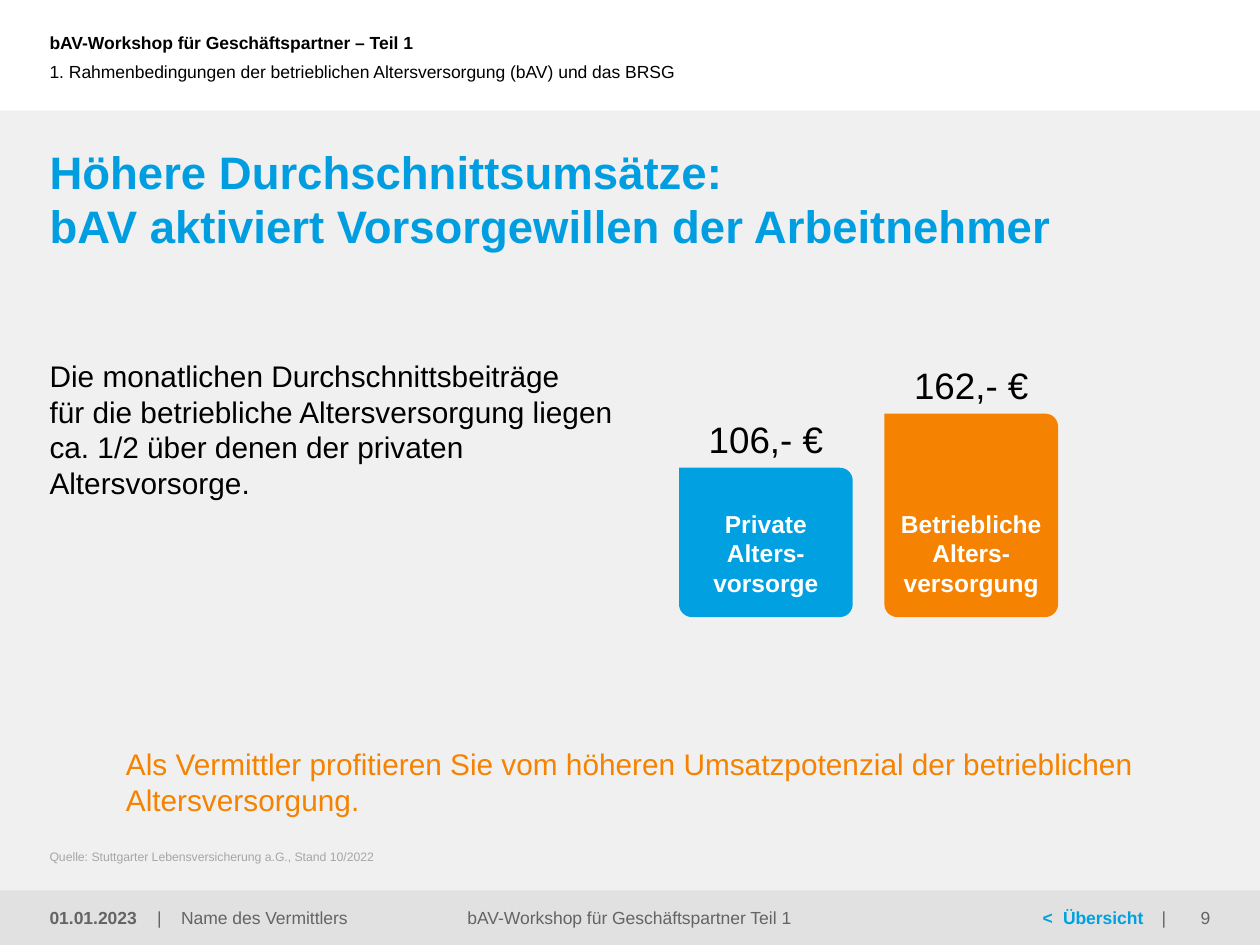
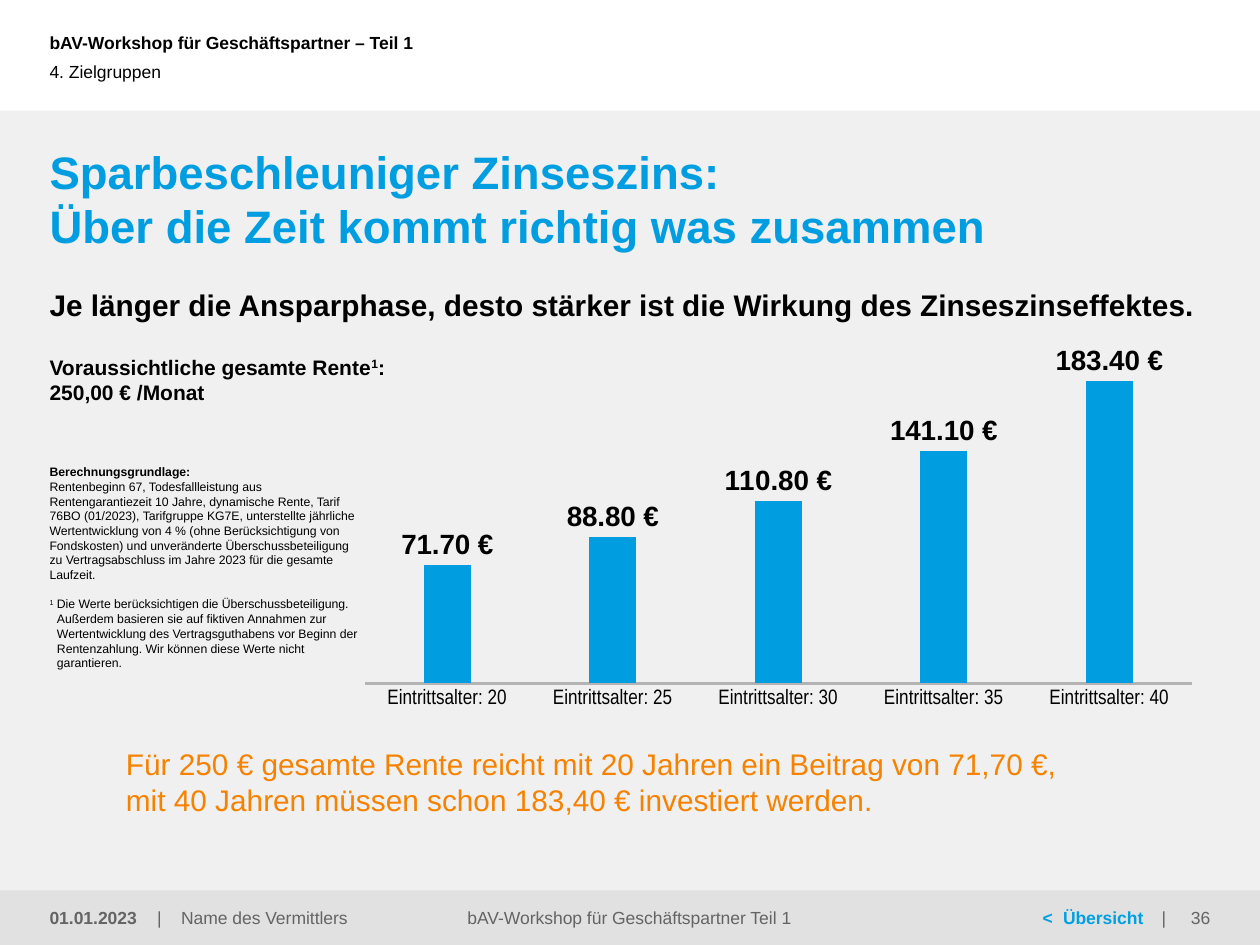
"""Builds two workshop slides on occupational pensions: average premiums and compound interest."""
import math

from lxml import etree
from pptx import Presentation
from pptx import util as u
from pptx.chart.data import CategoryChartData
from pptx.dml.color import RGBColor
from pptx.enum import chart as ch, shapes, text
from pptx.oxml.ns import qn

BLUE, SKY, ORANGE = "009EE0", "00A0E1", "F58200"
BLACK, WHITE, GREY, PALE = "000000", "FFFFFF", "646464", "A6A6A6"
CANVAS, FOOTER, AXIS = "F0F0F0", "E1E1E1", "B3B3B3"
WIDTH, HEIGHT, MARGIN = 25.4, 19.05, 1
CANVAS_TOP, FOOTER_TOP = 2.23, 17.95
FOOTER_HEIGHT = HEIGHT - FOOTER_TOP

TOP, MIDDLE, BOTTOM = text.MSO_ANCHOR.TOP, text.MSO_ANCHOR.MIDDLE, text.MSO_ANCHOR.BOTTOM
LEFT, CENTER, RIGHT = text.PP_ALIGN.LEFT, text.PP_ALIGN.CENTER, text.PP_ALIGN.RIGHT

STYLES = {
    "title": dict(size=26, bold=True, color=BLUE),
    "header": dict(size=10, bold=True, color=BLACK),
    "section": dict(size=10, color=BLACK),
    "body": dict(size=17, color=BLACK),
    "subhead": dict(size=17, bold=True, color=BLACK),
    "takeaway": dict(size=17, color=ORANGE),
    "source": dict(size=7, color=PALE),
    "footer": dict(size=10, color=GREY),
    "pension": dict(size=12, bold=True, color=BLACK),
    "basis": dict(size=7, color=BLACK),
    "premium": dict(size=21, color=BLACK),
    "bar": dict(size=14, bold=True, color=WHITE),
}

PREMIUMS = [
    ("106,- €", ["Private", "Alters-", "vorsorge"], 3.01, SKY),
    ("162,- €", ["Betriebliche", "Alters-", "versorgung"], 4.1, ORANGE),
]
BAR = dict(left=13.69, bottom=12.44, width=3.5, step=4.14, radius=0.26)

SAVINGS = {20: 71.7, 25: 88.8, 30: 110.8, 35: 141.1, 40: 183.4}
CHART_BOX = (7.11, 6.88, 16.99, 7.7)
PLOT = dict(x=0.014, y=0.032, w=0.982, h=0.864)

SUPER = dict(baseline="30000")
PREMIUM_SLIDE = dict(
    number="9",
    section="1. Rahmenbedingungen der betrieblichen Altersversorgung (bAV) und das BRSG",
    title=["Höhere Durchschnittsumsätze:", "bAV aktiviert Vorsorgewillen der Arbeitnehmer"],
    takeaway=["Als Vermittler profitieren Sie vom höheren Umsatzpotenzial "
              "der betrieblichen Altersversorgung."],
)
PREMIUM_BODY = [
    "Die monatlichen Durchschnittsbeiträge",
    "für die betriebliche Altersversorgung liegen ca. 1/2 über denen der privaten Altersvorsorge.",
]
PREMIUM_SOURCE = ["Quelle: Stuttgarter Lebensversicherung a.G., Stand 10/2022"]

SAVINGS_SLIDE = dict(
    number="36",
    section="4. Zielgruppen",
    title=["Sparbeschleuniger Zinseszins:", "Über die Zeit kommt richtig was zusammen"],
    takeaway=["Für 250 € gesamte Rente reicht mit 20 Jahren ein Beitrag von 71,70 €,",
              "mit 40 Jahren müssen schon 183,40 € investiert werden."],
)
SAVINGS_SUBHEAD = ["Je länger die Ansparphase, desto stärker ist die Wirkung des Zinseszinseffektes."]
PENSION = [
    [("Voraussichtliche gesamte Rente", {}), ("1", SUPER), (":", {})],
    "250,00 € /Monat",
]
BASIS = [
    [("Berechnungsgrundlage:", dict(bold=True))],
    "Rentenbeginn 67, Todesfallleistung aus Rentengarantiezeit 10 Jahre, dynamische Rente, "
    "Tarif 76BO (01/2023), Tarifgruppe KG7E, unterstellte jährliche Wertentwicklung von 4 % "
    "(ohne Berücksichtigung von Fondskosten) und unveränderte Überschussbeteiligung zu "
    "Vertragsabschluss im Jahre 2023 für die gesamte Laufzeit.",
    [("1", SUPER),
     (" Die Werte berücksichtigen die Überschussbeteiligung. Außerdem basieren sie auf fiktiven "
      "Annahmen zur Wertentwicklung des Vertragsguthabens vor Beginn der Rentenzahlung. "
      "Wir können diese Werte nicht garantieren.", {})],
]

FOOTER_PARTS = [
    (MARGIN, 2.1, LEFT, [("01.01.2023", dict(bold=True))], ()),
    (3.17, 4, LEFT, [("|\tName des Vermittlers", {})], (0.48,)),
    (7.67, 10.03, CENTER, [("bAV-Workshop für Geschäftspartner Teil 1", {})], ()),
    (21.02, 2.7, LEFT, [("<\tÜbersicht", dict(bold=True, color=SKY)), ("\t|", {})], (0.41, 2.4)),
]


def rgb(color):
    return RGBColor.from_string(color)


def box_cm(*lengths):
    return [u.Cm(length) for length in lengths]


def format_font(font, size, color, bold=False, name="Arial"):
    font.color.rgb = rgb(color)
    for key, value in dict(size=u.Pt(size), bold=bold, name=name).items():
        setattr(font, key, value)


def paint(shape, color):
    shape.shadow.inherit = False
    shape.fill.solid()
    shape.fill.fore_color.rgb = rgb(color)
    shape.line.fill.background()


def write(shape, paragraphs, style, anchor=TOP, align=LEFT, inset_bottom=0, wrap=True):
    frame = shape.text_frame
    layout = dict(word_wrap=wrap, vertical_anchor=anchor, margin_left=0, margin_right=0,
                  margin_top=0, margin_bottom=u.Cm(inset_bottom))
    for key, value in layout.items():
        setattr(frame, key, value)
    for index, content in enumerate(paragraphs):
        paragraph = frame.add_paragraph() if index else frame.paragraphs[0]
        paragraph.alignment = align
        for words, changes in [(content, {})] if isinstance(content, str) else content:
            run = paragraph.add_run()
            run.text = words
            look = {**STYLES[style], **changes}
            baseline = look.pop("baseline", None)
            format_font(run.font, **look)
            if baseline:
                run.font._element.set("baseline", baseline)
    return frame


def add_text(slide, box, paragraphs, style, **layout):
    return write(slide.shapes.add_textbox(*box_cm(*box)), paragraphs, style, **layout)


def set_tabs(paragraph, stops):
    tabs = etree.SubElement(paragraph._p.get_or_add_pPr(), qn("a:tabLst"))
    for stop in stops:
        etree.SubElement(tabs, qn("a:tab"), pos=str(u.Cm(stop)), algn="l")


def add_frame(deck, number, section, title, takeaway):
    slide = deck.slides.add_slide(deck.slide_layouts[6])
    for top, color in [(CANVAS_TOP, CANVAS), (FOOTER_TOP, FOOTER)]:
        band = slide.shapes.add_shape(shapes.MSO_SHAPE.RECTANGLE,
                                      *box_cm(0, top, WIDTH, HEIGHT - top))
        paint(band, color)
    header = ["bAV-Workshop für Geschäftspartner – Teil 1"]
    add_text(slide, (MARGIN, 0, 17, 1.7), header, "header", anchor=MIDDLE)
    add_text(slide, (MARGIN, 0.64, 17.16, 1.6), [section], "section", anchor=MIDDLE)
    add_text(slide, (MARGIN, 2.9, 23.4, 2.2), title, "title")
    add_text(slide, (2.54, 14.99, 21.87, 1.73), takeaway, "takeaway",
             anchor=MIDDLE, inset_bottom=0.2)
    page = (23, 1.4, RIGHT, [(number, {})], ())
    for left, width, align, runs, stops in FOOTER_PARTS + [page]:
        frame = add_text(slide, (left, FOOTER_TOP, width, FOOTER_HEIGHT), [runs], "footer",
                         anchor=MIDDLE, align=align)
        if stops:
            set_tabs(frame.paragraphs[0], stops)
    return slide


def bar_outline(left, top, width, height, radius):
    right, bottom = left + width, top + height
    corners = [(right - radius, top + radius, -90), (right - radius, bottom - radius, 0),
               (left + radius, bottom - radius, 90)]
    points = [(left, top)]
    for x, y, start in corners:
        for angle in range(start, start + 91, 10):
            turn = math.radians(angle)
            points.append((x + radius * math.cos(turn), y + radius * math.sin(turn)))
    return [tuple(box_cm(*point)) for point in points]


def add_premium_bars(slide):
    for index, (premium, label, height, color) in enumerate(PREMIUMS):
        left = BAR["left"] + index * BAR["step"]
        top = BAR["bottom"] - height
        add_text(slide, (left, top - 1.02, BAR["width"], 0.9), [premium], "premium", align=CENTER)
        start, *outline = bar_outline(left, top, BAR["width"], height, BAR["radius"])
        builder = slide.shapes.build_freeform(*start)
        builder.add_line_segments(outline, close=True)
        bar = builder.convert_to_shape()
        paint(bar, color)
        write(bar, label, "bar", anchor=BOTTOM, align=CENTER, inset_bottom=0.4, wrap=False)


def fix_plot(chart):
    area = chart._chartSpace.find(".//" + qn("c:plotArea"))
    for old in area.findall(qn("c:layout")):
        area.remove(old)
    layout = etree.Element(qn("c:layout"))
    manual = etree.SubElement(layout, qn("c:manualLayout"))
    settings = dict(layoutTarget="inner", xMode="edge", yMode="edge", **PLOT)
    for key, value in settings.items():
        etree.SubElement(manual, qn("c:" + key), val=str(value))
    area.insert(0, layout)


def add_savings_chart(slide):
    data = CategoryChartData()
    data.categories = [f"Eintrittsalter: {age}" for age in SAVINGS]
    data.add_series("Series 1", SAVINGS.values())
    chart = slide.shapes.add_chart(ch.XL_CHART_TYPE.COLUMN_CLUSTERED,
                                   *box_cm(*CHART_BOX), data).chart
    chart.has_legend = chart.has_title = False
    format_font(chart.font, 11.9, BLACK, name="Arial Narrow")
    fix_plot(chart)

    ages, amounts = chart.category_axis, chart.value_axis
    ages.major_tick_mark = ch.XL_TICK_MARK.NONE
    ages.format.line.color.rgb = rgb(AXIS)
    ages.format.line.width = u.Pt(1.5)
    scale = dict(visible=False, has_major_gridlines=False, minimum_scale=0, maximum_scale=200)
    for key, value in scale.items():
        setattr(amounts, key, value)

    plot = chart.plots[0]
    for key, value in dict(gap_width=250, overlap=-20, vary_by_categories=False).items():
        setattr(plot, key, value)
    columns = plot.series[0]
    columns.format.fill.solid()
    columns.format.fill.fore_color.rgb = rgb(BLUE)
    labels = columns.data_labels
    label_values = dict(show_value=True, number_format='#,##0.00\\ "€"',
                        number_format_is_linked=False,
                        position=ch.XL_LABEL_POSITION.OUTSIDE_END)
    for key, value in label_values.items():
        setattr(labels, key, value)
    format_font(labels.font, 15.9, BLACK, bold=True)


def add_premium_slide(deck):
    slide = add_frame(deck, **PREMIUM_SLIDE)
    add_text(slide, (MARGIN, 7.21, 12.1, 7.6), PREMIUM_BODY, "body")
    add_text(slide, (MARGIN, 17.12, 23.4, 0.3), PREMIUM_SOURCE, "source", anchor=BOTTOM)
    add_premium_bars(slide)


def add_savings_slide(deck):
    slide = add_frame(deck, **SAVINGS_SLIDE)
    add_text(slide, (MARGIN, 5.79, 23.42, 0.74), SAVINGS_SUBHEAD, "subhead")
    add_text(slide, (MARGIN, 7.14, 12.7, 1.12), PENSION, "pension")
    basis = add_text(slide, (MARGIN, 8.89, 6.35, 4.62), BASIS, "basis", anchor=BOTTOM)
    footnote = basis.paragraphs[-1]
    footnote.space_before = u.Pt(8.4)
    hanging = u.Cm(0.15)
    for key, value in dict(marL=hanging, indent=-hanging).items():
        footnote._p.get_or_add_pPr().set(key, str(value))
    add_savings_chart(slide)


def main():
    deck = Presentation()
    deck.slide_width, deck.slide_height = box_cm(WIDTH, HEIGHT)
    add_premium_slide(deck)
    add_savings_slide(deck)
    deck.save("out.pptx")


if __name__ == "__main__":
    main()
